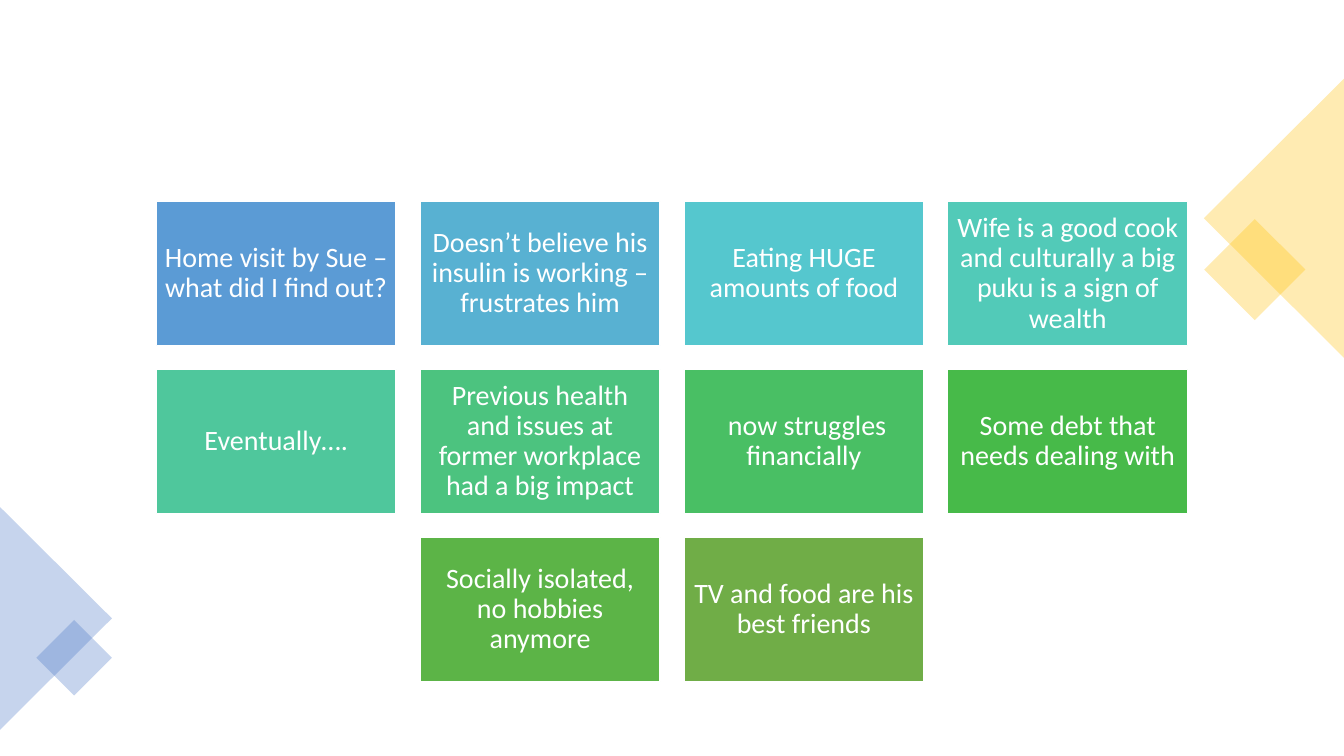
import pptx
import pptx.util
import pptx.dml.color
import pptx.enum.shapes
import pptx.enum.text
import pptx.oxml
import pptx.oxml.ns

Inches = pptx.util.Inches
Shape = pptx.enum.shapes.MSO_SHAPE

ROWS = [
    [("Home visit by Sue – what did I find out?", "5B9BD5"),
     ("Doesn’t believe his insulin is working – frustrates him", "58B1D2"),
     ("Eating HUGE amounts of food", "55C7CE"),
     ("Wife is a good cook and culturally a big puku is a sign of wealth", "52CAB8")],
    [("Eventually….", "4FC79C"),
     ("Previous health and issues at former workplace had a big impact", "4CC37F"),
     (" now struggles financially", "49BF64"),
     ("Some debt that needs dealing with", "47BA49")],
    [("Socially isolated, no hobbies anymore", "5CB447"),
     ("TV and food are his best friends", "70AD47")],
]
DECOR = [
    (Shape.RECTANGLE, (12.09, 2.32, 0.71, 0.71), 45, "FFC000"),
    (Shape.ISOSCELES_TRIANGLE, (11.25, 1.47, 2.77, 1.39), 270, "FFC000"),
    (Shape.ISOSCELES_TRIANGLE, (-0.55, 5.58, 2.21, 1.11), 90, "4472C4"),
    (Shape.RECTANGLE, (0.47, 6.26, 0.53, 0.53), 45, "4472C4"),
]
WIDE, HIGH = 13.33, 7.5
CARD_W, CARD_H = 2.38, 1.43
STEP_X, STEP_Y, TOP = 2.617, 1.665, 2
PAD = Inches(0.08)
FRAME = {
    "word_wrap": True,
    "vertical_anchor": pptx.enum.text.MSO_ANCHOR.MIDDLE,
    "margin_left": PAD, "margin_right": PAD,
    "margin_top": PAD, "margin_bottom": PAD,
}
PARA = {"alignment": pptx.enum.text.PP_ALIGN.CENTER, "line_spacing": 0.9}
FONT = {"name": "Calibri", "size": pptx.util.Pt(20)}


def put(item, values):
    for name, value in values.items():
        setattr(item, name, value)


def tint(fill, code):
    fill.solid()
    fill.fore_color.rgb = pptx.dml.color.RGBColor.from_string(code)


def add(slide, kind, box, code):
    shape = slide.shapes.add_shape(kind, *map(Inches, box))
    shape.shadow.inherit = False
    tint(shape.fill, code)
    return shape


def add_decor(slide, kind, box, turn, code):
    shape = add(slide, kind, box, code)
    shape.rotation = turn
    shape.line.fill.background()
    color = shape.fill._xPr.find(".//" + pptx.oxml.ns.qn("a:srgbClr"))
    color.append(pptx.oxml.parse_xml(
        f'<a:alpha {pptx.oxml.ns.nsdecls("a")} val="30000"/>'))


def add_card(slide, box, text, code):
    card = add(slide, Shape.RECTANGLE, box, code)
    tint(card.line.fill, "FFFFFF")
    card.line.width = pptx.util.Pt(1)
    put(card.text_frame, FRAME)
    para = card.text_frame.paragraphs[0]
    put(para, PARA)
    run = para.add_run()
    run.text = text
    put(run.font, FONT)
    tint(run.font.fill, "FFFFFF")


def main():
    deck = pptx.Presentation()
    deck.slide_width, deck.slide_height = Inches(WIDE), Inches(HIGH)
    slide = deck.slides.add_slide(deck.slide_layouts[6])
    for part in DECOR:
        add_decor(slide, *part)
    for row, cards in enumerate(ROWS):
        left = (WIDE - CARD_W - (len(cards) - 1) * STEP_X) / 2
        for col, (text, code) in enumerate(cards):
            box = (left + col * STEP_X, TOP + row * STEP_Y, CARD_W, CARD_H)
            add_card(slide, box, text, code)
    deck.save("out.pptx")


if __name__ == "__main__":
    main()
